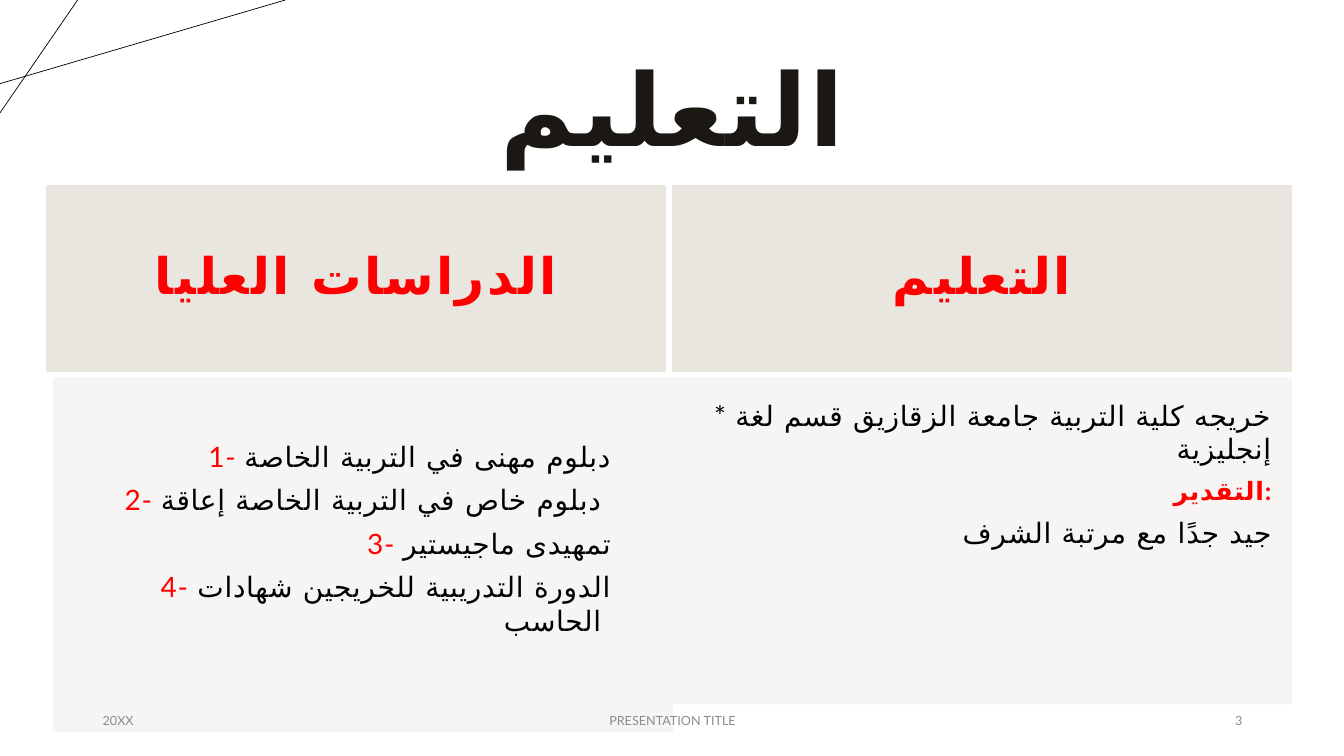
from dataclasses import dataclass

from lxml.etree import SubElement
from pptx import Presentation
from pptx.dml.color import RGBColor
from pptx.enum.shapes import MSO_CONNECTOR, MSO_SHAPE
from pptx.enum.text import MSO_ANCHOR as ANCHOR, PP_ALIGN as ALIGN
from pptx.oxml.ns import qn
from pptx.util import Inches, Pt

BLACK = RGBColor(0x00, 0x00, 0x00)
INK = RGBColor(0x1B, 0x18, 0x13)
RED = RGBColor(0xFF, 0x00, 0x00)
GRAY = RGBColor(0x8C, 0x8C, 0x8C)
SAND = RGBColor(0xE9, 0xE6, 0xDF)
PALE = RGBColor(0xF7, 0xF5, 0xF3)
ARABIC_FONT = "DejaVu Sans"


@dataclass
class Style:
    size: float
    color: RGBColor
    font: str = "Lato"
    bold: bool = False
    spacing: int = 0  # hundredths of a point


@dataclass
class Para:
    runs: list[tuple[str, Style]]
    align: ALIGN = ALIGN.RIGHT
    line: float = 1.0
    after: float = 0


@dataclass
class Column:
    left: float
    body_left: float
    body_height: float
    inset: float
    heading: str
    body: list[Para]


TITLE = Style(72, INK, bold=True, spacing=150)
HEADING = Style(36, RED, "Arial Narrow", True, 150)
BODY = Style(20, BLACK, spacing=50)
NUMBER = Style(20, RED, spacing=50)
LABEL = Style(18, RED, bold=True, spacing=50)
FOOTER = Style(9, GRAY)


def body_para(*runs: tuple[str, Style]) -> Para:
    return Para(list(runs), after=7)


COLUMNS = [
    Column(0.46, 0.53, 3.51, 0.61, "الدراسات العليا", [
        body_para(("1-", NUMBER), (" دبلوم مهنى في التربية الخاصة", BODY)),
        body_para(("2-", NUMBER), (" دبلوم خاص في التربية الخاصة إعاقة ", BODY)),
        body_para(("3- ", NUMBER), ("تمهيدى ماجيستير", BODY)),
        body_para(("4-", NUMBER),
                  (" الدورة التدريبية للخريجين شهادات الحاسب ", BODY)),
    ]),
    Column(6.67, 6.67, 3.23, 0.2, "التعليم", [
        body_para(("* خريجه كلية التربية جامعة الزقازيق قسم لغة إنجليزية", BODY)),
        body_para(("التقدير:", LABEL)),
        body_para(("جيد جدًا مع مرتبة الشرف", BODY)),
    ]),
]
COLUMN_WIDTH = 6.14
HEADING_TOP, HEADING_HEIGHT = 1.84, 1.84
BODY_TOP = 3.75

FOOTERS = [
    (0.92, 3, "20XX", ALIGN.LEFT),
    (4.42, 4.5, "PRESENTATION TITLE", ALIGN.CENTER),
    (9.42, 3, "3", ALIGN.RIGHT),
]
CORNER_LINES = [(0, 0.83, 2.83, 0), (0.77, 0, 0, 1.12)]


def write(sp, paras: list[Para], anchor: ANCHOR, inset: float | None = None) -> None:
    tf = sp.text_frame
    tf.word_wrap = True
    tf.vertical_anchor = anchor
    if inset is not None:
        tf.margin_left = tf.margin_right = Inches(inset)
        tf.margin_top = tf.margin_bottom = Inches(inset)
    for i, para in enumerate(paras):
        p = tf.add_paragraph() if i else tf.paragraphs[0]
        p.alignment = para.align
        p.line_spacing = para.line
        p.space_after = Pt(para.after)
        for text, style in para.runs:
            r = p.add_run()
            r.text = text
            r.font.size = Pt(style.size)
            r.font.bold = style.bold
            r.font.name = style.font
            r.font.color.rgb = style.color
            rpr = r.font._element
            rpr.set("spc", str(style.spacing))
            SubElement(rpr, qn("a:cs"), typeface=ARABIC_FONT)


def add_text(slide, left: float, top: float, width: float, height: float,
             para: Para) -> None:
    sp = slide.shapes.add_textbox(Inches(left), Inches(top),
                                  Inches(width), Inches(height))
    write(sp, [para], ANCHOR.MIDDLE)


def add_panel(slide, left: float, top: float, height: float,
              color: RGBColor, opacity: int = 100):
    sp = slide.shapes.add_shape(MSO_SHAPE.RECTANGLE, Inches(left), Inches(top),
                                Inches(COLUMN_WIDTH), Inches(height))
    sp.shadow.inherit = False
    sp.fill.solid()
    sp.fill.fore_color.rgb = color
    sp.line.color.rgb = color
    sp.line.width = Pt(1)
    if opacity < 100:
        for clr in sp._element.spPr.iter(qn("a:srgbClr")):
            SubElement(clr, qn("a:alpha"), val=str(opacity * 1000))
    return sp


def add_line(slide, x1: float, y1: float, x2: float, y2: float) -> None:
    line = slide.shapes.add_connector(MSO_CONNECTOR.STRAIGHT, Inches(x1), Inches(y1),
                                      Inches(x2), Inches(y2))
    line.line.color.rgb = BLACK
    line.line.width = Pt(0.5)
    SubElement(line._element.spPr, qn("a:effectLst"))


def main() -> None:
    prs = Presentation()
    prs.slide_width, prs.slide_height = Inches(13.33), Inches(7.5)
    slide = prs.slides.add_slide(prs.slide_layouts[6])

    # Corner decoration and title
    for ends in CORNER_LINES:
        add_line(slide, *ends)
    add_text(slide, 0.92, 0.4, 11.5, 1.45,
             Para([("التعليم", TITLE)], ALIGN.CENTER, 0.9))

    # Two columns: heading panel above body panel
    for col in COLUMNS:
        sp = add_panel(slide, col.left, HEADING_TOP, HEADING_HEIGHT, SAND)
        write(sp, [Para([(col.heading, HEADING)], ALIGN.CENTER, 0.9)],
              ANCHOR.MIDDLE, 0.48)
        sp = add_panel(slide, col.body_left, BODY_TOP, col.body_height, PALE, 90)
        write(sp, col.body, ANCHOR.TOP, col.inset)

    # Footer
    for left, width, text, align in FOOTERS:
        add_text(slide, left, 6.95, width, 0.4, Para([(text, FOOTER)], align))

    prs.save("out.pptx")


if __name__ == "__main__":
    main()
